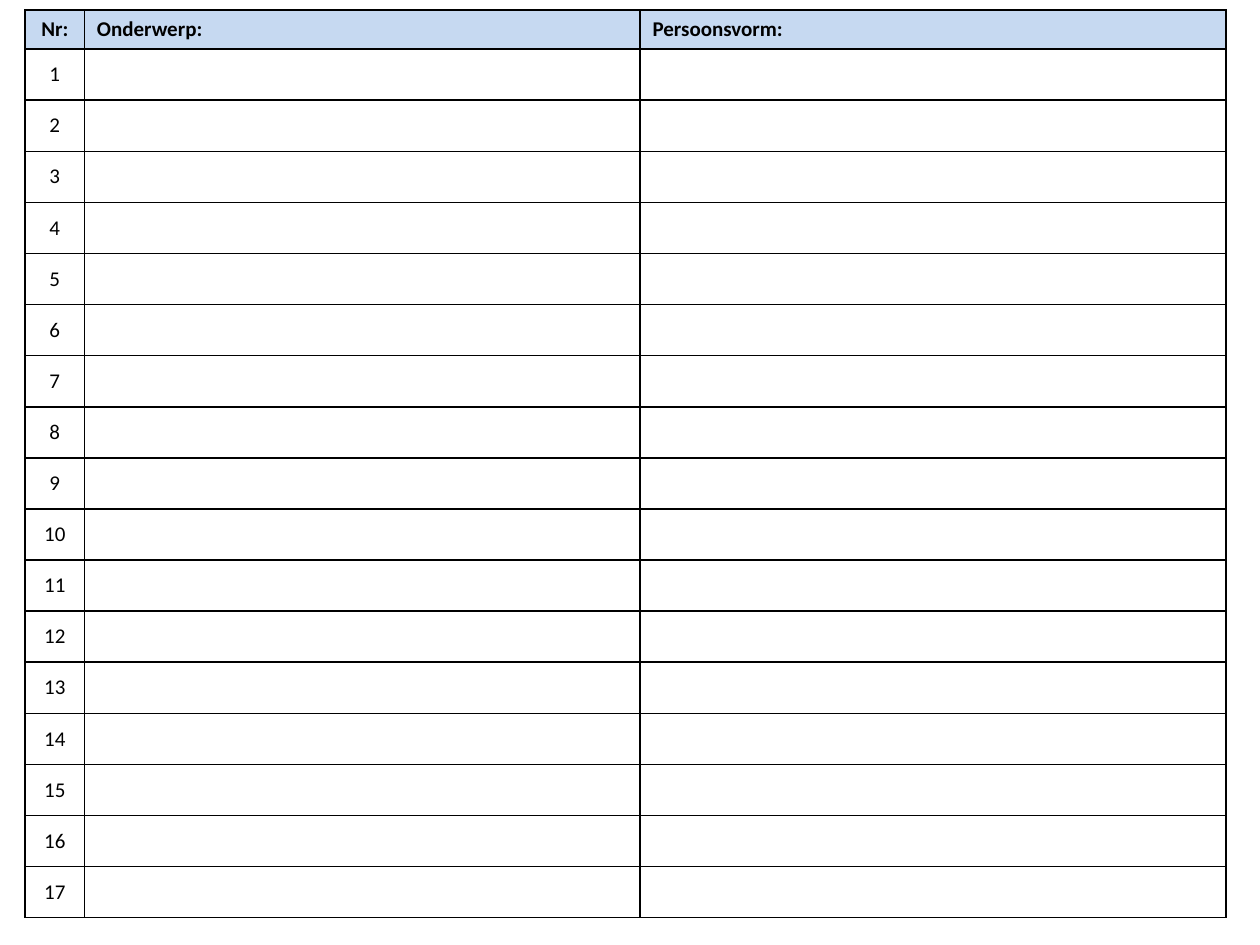
from lxml.etree import SubElement as Sub
from pptx import Presentation
from pptx.dml.color import RGBColor as RGB
from pptx.enum.text import MSO_ANCHOR as Anchor, PP_ALIGN as Align
from pptx.oxml.ns import qn
from pptx.util import Inches, Pt

INK = {"text": "000000", "line": "000000", "head": "C6D9F1"}
HEADS = ["Nr:", "Onderwerp:", "Persoonsvorm:"]
COUNT = 17
COLS = [0.47, 4.41, 4.65]
HEAD = 0.31


def edge(cell):
    props = cell._tc.get_or_add_tcPr()
    for side in ("lnL", "lnR", "lnT", "lnB"):
        line = Sub(props, qn(f"a:{side}"), w=str(Pt(1)))
        fill = Sub(line, qn("a:solidFill"))
        Sub(fill, qn("a:srgbClr"), val=INK["line"])


def write(cell, text, bold, align):
    cell.text = text
    para = cell.text_frame.paragraphs[0]
    para.alignment = align
    font = para.font
    font.name, font.size, font.bold = "Calibri", Pt(12), bold
    font.color.rgb = RGB.from_string(INK["text"])


def sheet(slide, left, top, width, height):
    rows = [HEADS] + [[str(n), "", ""] for n in range(1, COUNT + 1)]
    box = map(Inches, (left, top, width, height))
    table = slide.shapes.add_table(len(rows), len(COLS), *box).table
    table.first_row = table.horz_banding = False
    for col, share in zip(table.columns, COLS):
        col.width = Inches(width * share / sum(COLS))
    for r, texts in enumerate(rows):
        first = r == 0
        table.rows[r].height = Inches(HEAD if first else (height - HEAD) / COUNT)
        for c, text in enumerate(texts):
            cell = table.cell(r, c)
            edge(cell)
            write(cell, text, first, Align.LEFT if c else Align.CENTER)
            if first:
                cell.fill.solid()
                cell.fill.fore_color.rgb = RGB.from_string(INK["head"])
            else:
                cell.fill.background()
                cell.vertical_anchor = Anchor.MIDDLE


def main():
    deck = Presentation()
    deck.slide_width, deck.slide_height = Inches(10), Inches(7.5)
    slide = deck.slides.add_slide(deck.slide_layouts[6])
    sheet(slide, 0.2, 0.08, 9.53, 7.21)
    deck.save("out.pptx")


if __name__ == "__main__":
    main()
